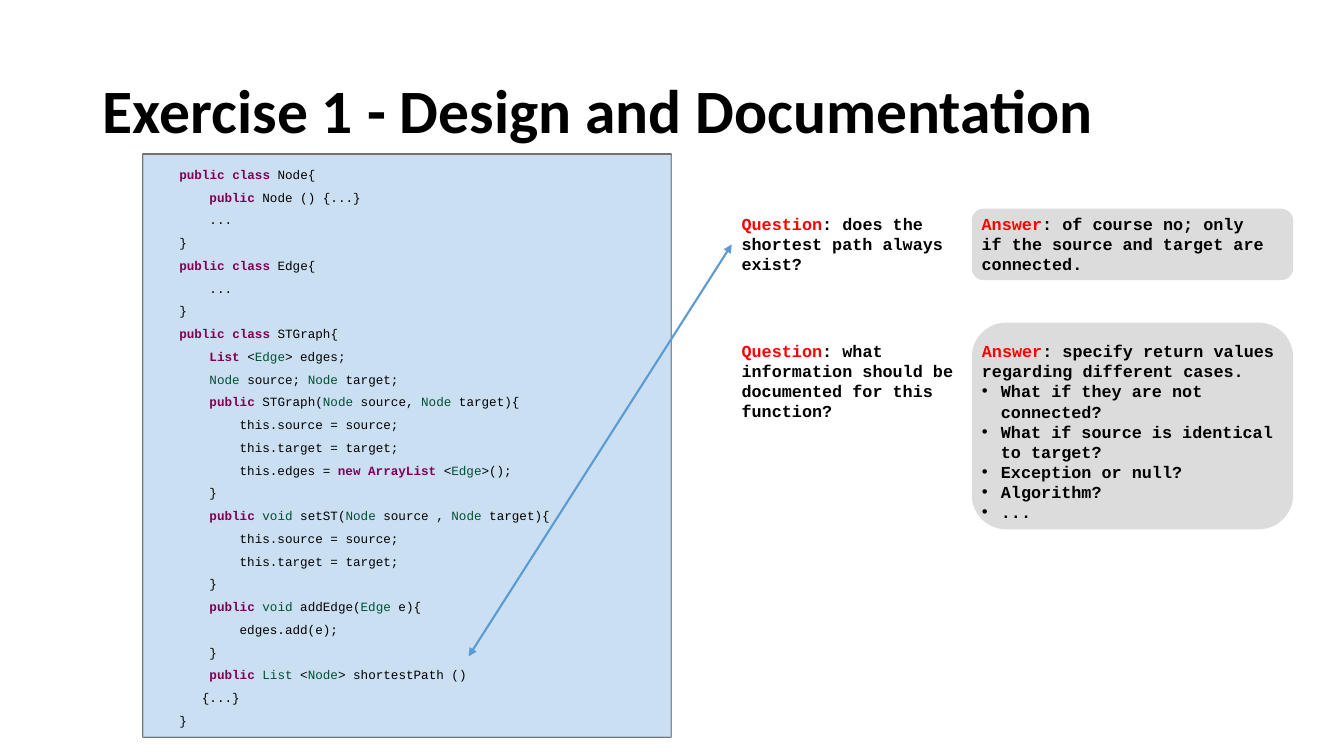
"""Build the exercise slide that pairs graph code with questions and answers."""
from dataclasses import dataclass
from typing import Any, Optional

from lxml import etree
from pptx import Presentation
from pptx import util as u
from pptx.dml.color import RGBColor
from pptx.enum import shapes, text
from pptx.oxml import ns


@dataclass(frozen=True)
class Theme:
    ink: str = "000000"
    keyword: str = "7F0055"
    type_name: str = "005032"
    label: str = "FF0000"
    frame: str = "767171"
    panel: str = "BDD7EE"
    bubble: str = "BFBFBF"
    arrow: str = "5B9BD5"
    title_font: str = "Calibri"
    code_font: str = "Courier New"
    title_size: float = 44
    note_size: float = 12
    code_size: float = 9
    line_width: float = 1.5


@dataclass(frozen=True)
class Box:
    left: float
    top: float
    width: float
    height: float

    def lengths(self) -> tuple:
        """Return the four lengths ready for python-pptx."""
        return tuple(u.Cm(value) for value in (self.left, self.top, self.width, self.height))


@dataclass(frozen=True)
class Panel:
    kind: Any
    box: Box
    fill: Optional[str] = None
    opacity: int = 100
    line: Optional[str] = None


@dataclass(frozen=True)
class Line:
    content: str
    indent: float = 0
    hanging: float = 0


@dataclass(frozen=True)
class Style:
    font: str
    size: float
    bold: bool
    spacing: float = 1


THEME = Theme()
TITLE = Style(THEME.title_font, THEME.title_size, True, 0.9)
CODE = Style(THEME.code_font, THEME.code_size, False, 1.5)
NOTE = Style(THEME.code_font, THEME.note_size, True)
ROLES = {"#": (THEME.keyword, True), "@": (THEME.type_name, False), "!": (THEME.label, True)}

CHARACTER = 0.19
BULLET = 0.48
QUESTION_LEFT, QUESTION_WIDTH = 18.44, 7.01
ANSWER_LEFT, BUBBLE_WIDTH = 24.49, 8.1
FIRST_TOP, FIRST_HEIGHT = 5.26, 1.8
SECOND_TOP = 8.46
ARROW_START = (11.81, 16.54)

PANELS = [
    Panel(shapes.MSO_SHAPE.RECTANGLE, Box(3.61, 3.89, 13.31, 14.68), line=THEME.frame),
    Panel(shapes.MSO_SHAPE.RECTANGLE, Box(3.61, 3.91, 13.31, 14.66), THEME.panel, 80),
    Panel(shapes.MSO_SHAPE.ROUNDED_RECTANGLE,
          Box(ANSWER_LEFT, FIRST_TOP, BUBBLE_WIDTH, FIRST_HEIGHT), THEME.bubble, 54),
    Panel(shapes.MSO_SHAPE.ROUNDED_RECTANGLE,
          Box(ANSWER_LEFT, 8.13, BUBBLE_WIDTH, 5.21), THEME.bubble, 54),
]

CODE_LINES = [Line(content, columns * CHARACTER) for columns, content in [
    (0, "#public class| Node{"),
    (4, "#public| Node () {...}"),
    (4, "..."),
    (0, "}"),
    (0, "#public class |Edge{"),
    (4, "..."),
    (0, "}"),
    (0, "#public class |STGraph{"),
    (4, "#List| <|@Edge|> edges;"),
    (4, "@Node| source; |@Node| target;"),
    (4, "#public |STGraph(|@Node| source, |@Node| target){"),
    (8, "this.source = source;"),
    (8, "this.target = target;"),
    (8, "this.edges = |#new ArrayList| <|@Edge|>();"),
    (4, "}"),
    (4, "#public |@void |setST(|@Node| source , |@Node| target){"),
    (8, "this.source = source;"),
    (8, "this.target = target;"),
    (4, "}"),
    (4, "#public |@void |addEdge(|@Edge| e){"),
    (8, "edges.add(e);"),
    (4, "}"),
    (4, "#public |@List| <|@Node|> shortestPath ()"),
    (3, "{...}"),
    (0, "}"),
]]
ANSWER_LINES = [Line("!Answer|: specify return values regarding different cases.")] + [
    Line(point, BULLET, BULLET) for point in (
        "What if they are not connected?", "What if source is identical to target?",
        "Exception or null?", "Algorithm?", "...")
]


def apply_format(target: Any, values: dict) -> None:
    """Set each named attribute on the target."""
    for name, value in values.items():
        setattr(target, name, value)


def write_lines(shape: Any, lines: list, style: Style) -> None:
    """Fill a shape with lines whose pieces are coloured by their role mark."""
    for index, line in enumerate(lines):
        frame = shape.text_frame
        paragraph = frame.paragraphs[0] if index == 0 else frame.add_paragraph()
        apply_format(paragraph, {"alignment": text.PP_ALIGN.LEFT, "line_spacing": style.spacing,
                                 "space_before": u.Pt(0), "space_after": u.Pt(0)})
        properties = paragraph._p.get_or_add_pPr()
        properties.set("marL", str(u.Cm(line.indent)))
        properties.set("indent", str(-u.Cm(line.hanging)))
        if not line.hanging:
            etree.SubElement(properties, ns.qn("a:buNone"))
        for piece in line.content.split("|"):
            color, bold = ROLES.get(piece[0], (THEME.ink, style.bold))
            run = paragraph.add_run()
            run.text = piece[1:] if piece[0] in ROLES else piece
            apply_format(run.font, {"name": style.font, "size": u.Pt(style.size), "bold": bold})
            run.font.color.rgb = RGBColor.from_string(color)


def place(shape: Any, box: Box) -> None:
    """Move and size a shape."""
    apply_format(shape, dict(zip(("left", "top", "width", "height"), box.lengths())))


def add_panel(slide: Any, panel: Panel) -> None:
    """Draw one background panel."""
    shape = slide.shapes.add_shape(panel.kind, *panel.box.lengths())
    shape.shadow.inherit = False
    if panel.fill:
        shape.fill.solid()
        shape.fill.fore_color.rgb = RGBColor.from_string(panel.fill)
        color = shape.element.spPr.find(ns.qn("a:solidFill"))[0]
        etree.SubElement(color, ns.qn("a:alpha"), val=str(panel.opacity * 1000))
    else:
        shape.fill.background()
    if panel.line:
        shape.line.color.rgb = RGBColor.from_string(panel.line)
        shape.line.width = u.Pt(THEME.line_width)
    else:
        shape.line.fill.background()


def add_text(slide: Any, box: Box, lines: list, style: Style) -> Any:
    """Add a wrapping text box and return it."""
    shape = slide.shapes.add_textbox(*box.lengths())
    apply_format(shape.text_frame, {"word_wrap": True,
                                    "auto_size": text.MSO_AUTO_SIZE.SHAPE_TO_FIT_TEXT})
    write_lines(shape, lines, style)
    return shape


def add_arrow(slide: Any, question: Any) -> None:
    """Link the last method of the code with its question."""
    start = [u.Cm(value) for value in ARROW_START]
    arrow = slide.shapes.add_connector(shapes.MSO_CONNECTOR.STRAIGHT, *start, *start)
    arrow.end_connect(question, 1)
    arrow.line.color.rgb = RGBColor.from_string(THEME.arrow)
    arrow.line.width = u.Pt(THEME.line_width)
    for end in ("a:headEnd", "a:tailEnd"):
        etree.SubElement(arrow.line._get_or_add_ln(), ns.qn(end), type="triangle")
    etree.SubElement(arrow._element.spPr, ns.qn("a:effectLst"))


def main() -> None:
    """Build and save the slide."""
    presentation = Presentation()
    apply_format(presentation, {"slide_width": u.Cm(33.87), "slide_height": u.Cm(19.05)})
    slide = presentation.slides.add_slide(presentation.slide_layouts[1])
    title, answer = slide.placeholders
    place(title, Box(2.34, 1.02, 29.21, 3.68))
    title.text_frame.vertical_anchor = text.MSO_ANCHOR.MIDDLE
    write_lines(title, [Line("Exercise 1 - Design and Documentation")], TITLE)
    for panel in PANELS:
        add_panel(slide, panel)
    add_text(slide, Box(4.27, 3.89, 12.67, 14.68), CODE_LINES, CODE)
    question = add_text(slide, Box(QUESTION_LEFT, FIRST_TOP, QUESTION_WIDTH, FIRST_HEIGHT),
                        [Line("!Question|: does the shortest path always exist?")], NOTE)
    add_arrow(slide, question)
    add_text(slide, Box(ANSWER_LEFT, FIRST_TOP, 7.82, 2.31),
             [Line("!Answer|: of course no; only if the source and target are connected.")], NOTE)
    add_text(slide, Box(QUESTION_LEFT, SECOND_TOP, QUESTION_WIDTH, 2.31),
             [Line("!Question|: what information should be documented for this function?")], NOTE)
    place(answer, Box(ANSWER_LEFT, SECOND_TOP, 8.51, 4.88))
    answer.text_frame.auto_size = text.MSO_AUTO_SIZE.SHAPE_TO_FIT_TEXT
    write_lines(answer, ANSWER_LINES, NOTE)
    answer.element.getparent().append(answer.element)
    presentation.save("out.pptx")


if __name__ == "__main__":
    main()
